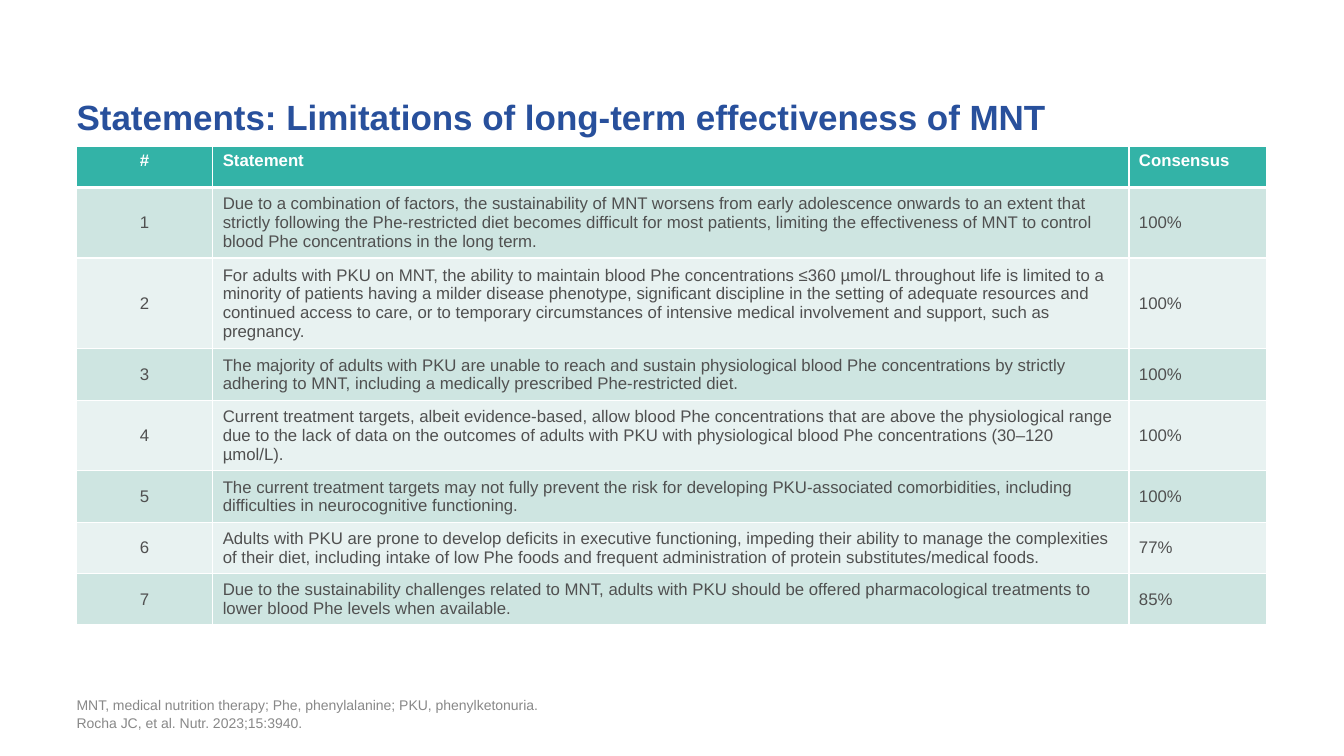
from lxml.etree import SubElement
from pptx import Presentation
from pptx.dml.color import RGBColor
from pptx.enum.text import MSO_ANCHOR, PP_ALIGN
from pptx.oxml.ns import qn
from pptx.util import Pt

COLORS = {
    "title": "28509C",
    "footnote": "888888",
    "text": "505050",
    "white": "FFFFFF",
    "header": "33B3A7",
    "odd": "CEE5E1",
    "even": "E8F2F1",
}
LEFT, WIDTH = 54.72, 850.32
COLUMN_WIDTHS = [97.2, 654.48, 98.64]
ROW_HEIGHTS = [29.52, 36.72, 46.8] + [36.72] * 5

HEADINGS = ["#", "Statement", "Consensus"]
STATEMENTS = [
    ("Due to a combination of factors, the sustainability of MNT worsens from early adolescence "
     "onwards to an extent that strictly following the Phe-restricted diet becomes difficult for "
     "most patients, limiting the effectiveness of MNT to control blood Phe concentrations in the "
     "long term.", "100%"),
    ("For adults with PKU on MNT, the ability to maintain blood Phe concentrations ≤360 µmol/L "
     "throughout life is limited to a minority of patients having a milder disease phenotype, "
     "significant discipline in the setting of adequate resources and continued access to care, "
     "or to temporary circumstances of intensive medical involvement and support, such as "
     "pregnancy.", "100%"),
    ("The majority of adults with PKU are unable to reach and sustain physiological blood Phe "
     "concentrations by strictly adhering to MNT, including a medically prescribed "
     "Phe-restricted diet.", "100%"),
    ("Current treatment targets, albeit evidence-based, allow blood Phe concentrations that are "
     "above the physiological range due to the lack of data on the outcomes of adults with PKU "
     "with physiological blood Phe concentrations (30–120 µmol/L).", "100%"),
    ("The current treatment targets may not fully prevent the risk for developing PKU-associated "
     "comorbidities, including difficulties in neurocognitive functioning.", "100%"),
    ("Adults with PKU are prone to develop deficits in executive functioning, impeding their "
     "ability to manage the complexities of their diet, including intake of low Phe foods and "
     "frequent administration of protein substitutes/medical foods.", "77%"),
    ("Due to the sustainability challenges related to MNT, adults with PKU should be offered "
     "pharmacological treatments to lower blood Phe levels when available.", "85%"),
]


class SlideBuilder:
    font_name = "Arial"
    line_spacing = 1.1

    def __init__(self, slide):
        self.slide = slide

    def add_run(self, paragraph, text, size, color, bold=False):
        run = paragraph.add_run()
        run.text = text
        run.font.name = self.font_name
        run.font.size = Pt(size)
        run.font.bold = bold
        run.font.color.rgb = RGBColor.from_string(COLORS[color])

    def add_text(self, top, height, lines, size, color, bold=False):
        """Add a bottom-anchored text box with one paragraph per line."""
        shape = self.slide.shapes.add_textbox(Pt(LEFT), Pt(top), Pt(WIDTH), Pt(height))
        frame = shape.text_frame
        frame.word_wrap = True
        frame.vertical_anchor = MSO_ANCHOR.BOTTOM
        frame.margin_left = frame.margin_right = frame.margin_top = frame.margin_bottom = 0
        for index, line in enumerate(lines):
            paragraph = frame.paragraphs[0] if index == 0 else frame.add_paragraph()
            paragraph.line_spacing = self.line_spacing
            self.add_run(paragraph, line, size, color, bold)

    def set_borders(self, cell, top, bottom):
        properties = cell._tc.get_or_add_tcPr()
        for side, width in (("L", 1), ("R", 1), ("T", top), ("B", bottom)):
            line = SubElement(properties, qn(f"a:ln{side}"), w=str(Pt(width)))
            fill = SubElement(line, qn("a:solidFill"))
            SubElement(fill, qn("a:srgbClr"), val=COLORS["white"])

    def fill_cell(self, cell, text, row, column):
        is_header = row == 0
        self.set_borders(cell, top=3 if row == 1 else 1, bottom=3 if is_header else 1)
        fill_name = "header" if is_header else ("even", "odd")[row % 2]
        cell.fill.solid()
        cell.fill.fore_color.rgb = RGBColor.from_string(COLORS[fill_name])
        cell.vertical_anchor = MSO_ANCHOR.TOP if is_header else MSO_ANCHOR.MIDDLE
        paragraph = cell.text_frame.paragraphs[0]
        paragraph.alignment = PP_ALIGN.CENTER if column == 0 else PP_ALIGN.LEFT
        self.add_run(paragraph, text, 12, "white" if is_header else "text", is_header)

    def add_table(self, top, rows):
        table = self.slide.shapes.add_table(
            len(rows), len(COLUMN_WIDTHS), Pt(LEFT), Pt(top), Pt(WIDTH), Pt(sum(ROW_HEIGHTS))
        ).table
        for column, width in zip(table.columns, COLUMN_WIDTHS):
            column.width = Pt(width)
        for row, height in zip(table.rows, ROW_HEIGHTS):
            row.height = Pt(height)
        for row, values in enumerate(rows):
            for column, text in enumerate(values):
                self.fill_cell(table.cell(row, column), text, row, column)


def main():
    presentation = Presentation()
    presentation.slide_width, presentation.slide_height = Pt(960), Pt(540)
    builder = SlideBuilder(presentation.slides.add_slide(presentation.slide_layouts[6]))
    builder.add_text(493.92, 28.8, [
        "MNT, medical nutrition therapy; Phe, phenylalanine; PKU, phenylketonuria.",
        "Rocha JC, et al. Nutr. 2023;15:3940.",
    ], 10, "footnote")
    builder.add_text(28.08, 69.84, ["Statements: Limitations of long-term effectiveness of MNT"],
                     25, "title", bold=True)
    rows = [(str(number), *statement) for number, statement in enumerate(STATEMENTS, 1)]
    builder.add_table(104.4, [HEADINGS, *rows])
    presentation.save("out.pptx")


if __name__ == "__main__":
    main()
